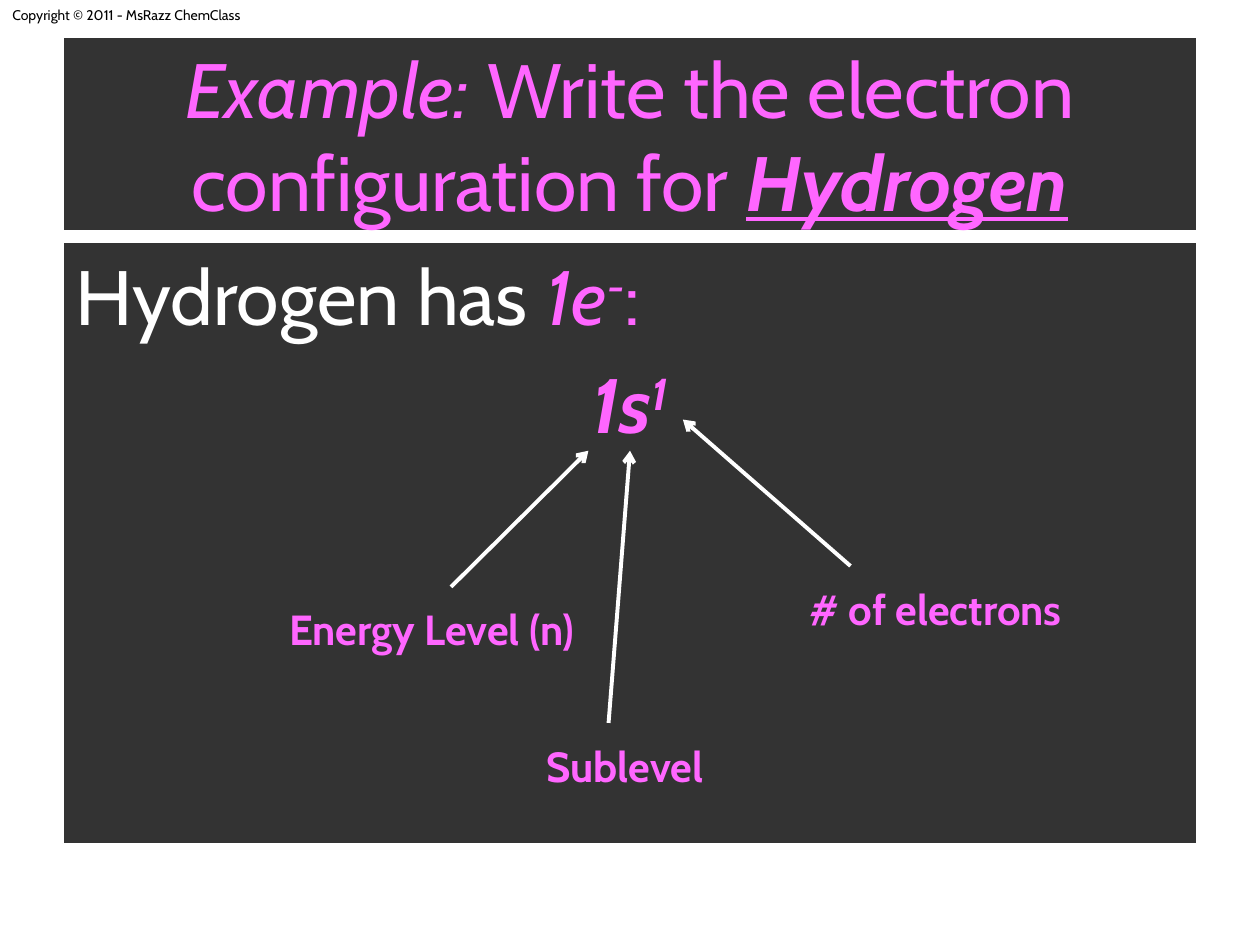
from lxml import etree
from pptx import Presentation
from pptx.dml.color import RGBColor
from pptx.enum.shapes import MSO_CONNECTOR, MSO_SHAPE
from pptx.enum.text import MSO_ANCHOR, MSO_AUTO_SIZE, PP_ALIGN
from pptx.oxml.ns import qn
from pptx.util import Inches, Pt

LEFT, CENTER = PP_ALIGN.LEFT, PP_ALIGN.CENTER
TOP, MIDDLE = MSO_ANCHOR.TOP, MSO_ANCHOR.MIDDLE
COLORS = {name: RGBColor.from_string(value) for name, value in {
    "panel": "000000", "white": "FFFFFF", "pink": "FF66FF", "black": "000000"}.items()}
FONT = "Cabin"

prs = Presentation()
prs.slide_width, prs.slide_height = Inches(10), Inches(7.5)
W, H = prs.slide_width, prs.slide_height
MARGIN = int(W * 0.05)
slide = prs.slides.add_slide(prs.slide_layouts[5])


def write(paragraph, runs, size, color, align):
    """Fill a paragraph; each run is (text, styles), where styles are
    i, b, u, s (superscript) and p (pink)."""
    paragraph.alignment = align
    font = paragraph.font
    font.name, font.size = FONT, Pt(size)
    font.color.rgb = COLORS[color]
    for text, styles in runs:
        run = paragraph.add_run()
        run.text = text
        run.font.name, run.font.size = FONT, Pt(size)
        run.font.color.rgb = COLORS["pink" if "p" in styles else color]
        run.font.italic, run.font.bold = "i" in styles, "b" in styles
        run.font.underline = "u" in styles
        if "s" in styles:
            run.font._element.set("baseline", "30000")


def add_label(text, left, top, width, height, size, color, bold, align):
    label = slide.shapes.add_textbox(
        int(W * left), int(H * top), int(W * width), int(H * height))
    label.text_frame.word_wrap = True
    write(label.text_frame.paragraphs[0], [(text, bold)], size, color, align)


# Copyright line
add_label("Copyright © 2011 - MsRazz ChemClass", 0, 0, 0.24, 0.03, 8, "black", "", LEFT)

# Title and body panels, translucent black
title = slide.shapes.title
body = slide.shapes.add_shape(MSO_SHAPE.RECTANGLE, 0, 0, W, H)
body.shadow.inherit = False
for panel, top, height, anchor in ((title, 0.04, 0.204, MIDDLE), (body, 0.256, 0.637, TOP)):
    panel.left, panel.width = MARGIN, W - 2 * MARGIN
    panel.top, panel.height = int(H * top), int(H * height)
    panel.fill.solid()
    panel.fill.fore_color.rgb = COLORS["panel"]
    fill_color = panel._element.spPr.find(qn("a:solidFill"))[0]
    etree.SubElement(fill_color, qn("a:alpha"), val="80000")
    panel.line.color.rgb = COLORS["white"]
    panel.line.width = Pt(0.75)
    panel.text_frame.word_wrap = True
    panel.text_frame.auto_size = MSO_AUTO_SIZE.NONE
    panel.text_frame.vertical_anchor = anchor

write(title.text_frame.paragraphs[0],
      [("Example: ", "i"), ("Write the electron configuration for ", ""),
       ("Hydrogen", "biu")], 44, "pink", CENTER)
write(body.text_frame.paragraphs[0],
      [("Hydrogen has ", ""), ("1e", "ip"), ("-", "ips"), (":", "p")],
      44, "white", LEFT)
configuration = body.text_frame.add_paragraph()
configuration.space_before = Pt(9)
write(configuration, [("1s", "bi"), ("1", "bis")], 44, "pink", CENTER)

# Parts of the configuration: label box, then arrow start and end
parts = (
    ("Energy Level (n)", (0.183, 0.632, 0.319), (0.358, 0.621), (0.467, 0.477)),
    ("Sublevel", (0.4, 0.777, 0.192), (0.483, 0.765), (0.5, 0.477)),
    ("# of electrons", (0.583, 0.611, 0.319), (0.675, 0.599), (0.542, 0.444)),
)
for text, (left, top, width), start, end in parts:
    arrow = slide.shapes.add_connector(
        MSO_CONNECTOR.STRAIGHT, int(W * start[0]), int(H * start[1]),
        int(W * end[0]), int(H * end[1]))
    arrow.line.color.rgb = COLORS["white"]
    arrow.line.width = Pt(2.25)
    etree.SubElement(arrow.line._get_or_add_ln(), qn("a:tailEnd"), type="arrow")
    etree.SubElement(arrow._element.spPr, qn("a:effectLst"))
    add_label(text, left, top, width, 0.068, 24, "pink", "b", CENTER)

prs.save("out.pptx")
